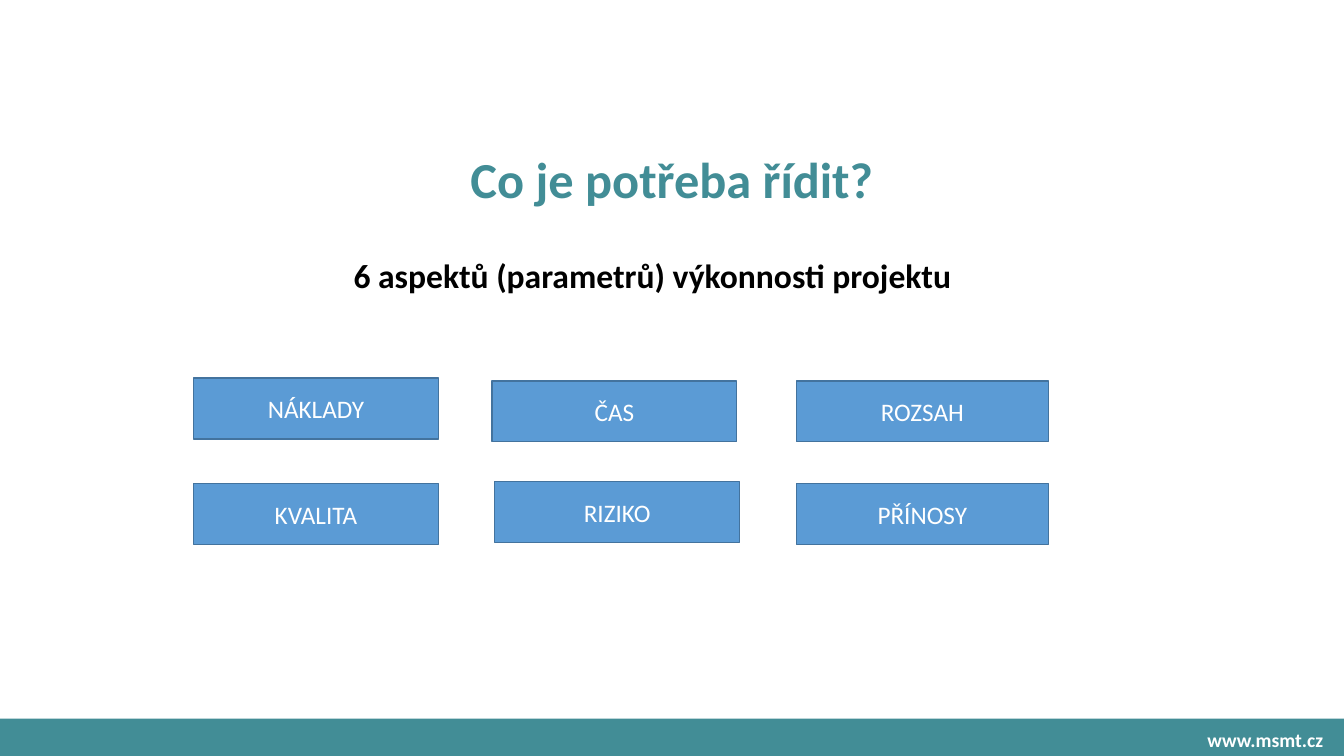
from lxml import etree
from pptx import Presentation
from pptx import util as u
from pptx.dml.color import RGBColor
from pptx.enum import shapes, text
from pptx.oxml.ns import qn

COLORS = {
    "teal": "428D96",
    "blue": "5B9BD5",
    "outline": "43739E",
    "white": "FFFFFF",
    "black": "000000",
}

ASPECTS = [
    ("NÁKLADY", 4.88, 9.53, 6.17),
    ("ČAS", 12.4, 9.6, 6.17),
    ("ROZSAH", 20.07, 9.6, 6.35),
    ("KVALITA", 4.88, 12.19, 6.17),
    ("RIZIKO", 12.47, 12.14, 6.17),
    ("PŘÍNOSY", 20.07, 12.19, 6.35),
]


class SlideBuilder:
    font_name = "Calibri"

    def __init__(self, deck):
        self.page = deck.slides.add_slide(deck.slide_layouts[1])

    def color(self, name):
        return RGBColor.from_string(COLORS[name])

    def place(self, box, left, top, width, height):
        box.left, box.top = u.Cm(left), u.Cm(top)
        box.width, box.height = u.Cm(width), u.Cm(height)

    def set_wording(self, box, wording, size, color, bold=False,
                    align=text.PP_ALIGN.CENTER, anchor=text.MSO_ANCHOR.MIDDLE):
        frame = box.text_frame
        frame.text = wording
        frame.word_wrap = True
        frame.auto_size = text.MSO_AUTO_SIZE.NONE
        frame.vertical_anchor = anchor
        para = frame.paragraphs[0]
        para.alignment = align
        para.space_before = u.Pt(0)
        for span in para.runs:
            span.font.name = self.font_name
            span.font.size = u.Pt(size)
            span.font.bold = bold
            span.font.color.rgb = self.color(color)
        return para

    def title(self, wording):
        box = self.page.shapes.title
        self.place(box, 2.33, 2.75, 29.21, 3.68)
        para = self.set_wording(box, wording, 36, "teal", bold=True)
        para.line_spacing = 0.9

    def body(self, wording):
        box = self.page.placeholders[1]
        self.place(box, 3.5, 5.1, 29.21, 12.1)
        para = self.set_wording(box, wording, 24, "black", bold=True,
                                align=text.PP_ALIGN.LEFT,
                                anchor=text.MSO_ANCHOR.TOP)
        para.line_spacing = 0.9
        box.text_frame.margin_left = u.Cm(5.41)
        box.text_frame.margin_top = u.Cm(1.45)
        properties = para._p.get_or_add_pPr()
        properties.set("marL", "0")
        properties.set("indent", "0")
        etree.SubElement(properties, qn("a:buNone"))

    def rectangle(self, left, top, width, height, fill, line=None):
        box = self.page.shapes.add_shape(
            shapes.MSO_SHAPE.RECTANGLE,
            u.Cm(left), u.Cm(top), u.Cm(width), u.Cm(height))
        box.shadow.inherit = False
        box.fill.solid()
        box.fill.fore_color.rgb = self.color(fill)
        if line:
            box.line.color.rgb = self.color(line)
            box.line.width = u.Pt(1)
        else:
            box.line.fill.background()
        return box

    def footer(self, wording):
        box = self.rectangle(0, 18.11, 33.87, 0.94, "teal")
        self.set_wording(box, wording, 14, "white", bold=True,
                         align=text.PP_ALIGN.RIGHT)
        box.text_frame.margin_right = u.Cm(0.52)
        box.text_frame.margin_bottom = 0

    def aspect(self, wording, left, top, width):
        box = self.rectangle(left, top, width, 1.53, "blue", "outline")
        self.set_wording(box, wording, 18, "white")


def main():
    deck = Presentation()
    deck.slide_width, deck.slide_height = u.Cm(33.87), u.Cm(19.05)
    builder = SlideBuilder(deck)
    builder.footer("www.msmt.cz")
    builder.title("Co je potřeba řídit?")
    builder.body("6 aspektů (parametrů) výkonnosti projektu")
    for aspect in ASPECTS:
        builder.aspect(*aspect)
    deck.save("out.pptx")


if __name__ == "__main__":
    main()
